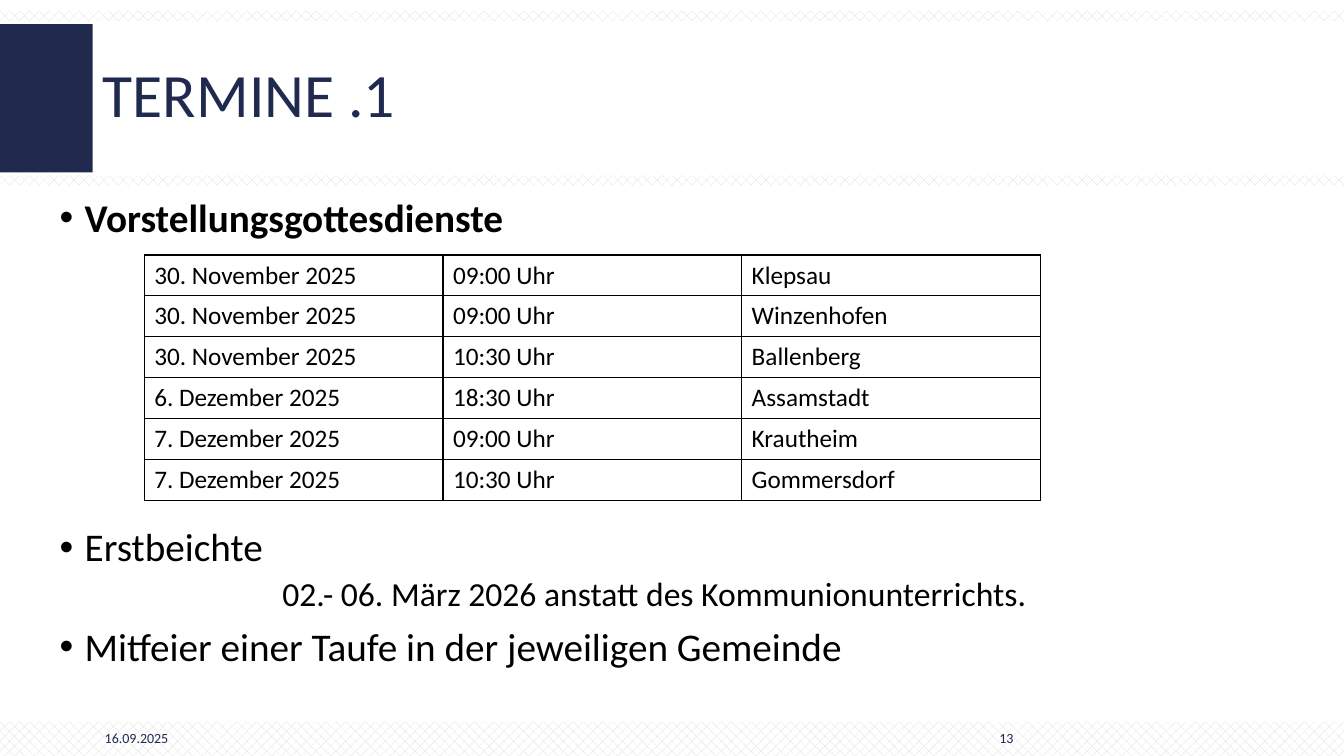
from lxml import etree
from pptx import Presentation
from pptx.dml.color import RGBColor
from pptx.enum.dml import MSO_PATTERN
from pptx.enum.shapes import MSO_SHAPE
from pptx.enum.text import MSO_ANCHOR, MSO_AUTO_SIZE, PP_ALIGN
from pptx.oxml.ns import qn
from pptx.util import Inches, Pt

RECTANGLE = MSO_SHAPE.RECTANGLE
LATTICE = MSO_PATTERN.PERCENT_30
MIDDLE, TOP = MSO_ANCHOR.MIDDLE, MSO_ANCHOR.TOP
LEFT, CENTER, RIGHT = PP_ALIGN.LEFT, PP_ALIGN.CENTER, PP_ALIGN.RIGHT
NO_AUTOFIT = MSO_AUTO_SIZE.NONE
NAVY, BLACK, WHITE, GREY = "202A4F", "000000", "FFFFFF", "D9D9D9"


def rgb(hex_color):
    return RGBColor.from_string(hex_color)


def style(paragraph, size, color, bold=False):
    font = paragraph.font
    font.name, font.size, font.bold = "Calibri", Pt(size), bold
    font.color.rgb = rgb(color)


prs = Presentation()
prs.slide_width, prs.slide_height = Inches(13.33), Inches(7.5)
slide = prs.slides.add_slide(prs.slide_layouts[1])
shapes = slide.shapes

# Decorative bands and title block
for top, height in [(7.16, 0.34), (1.74, 0.1), (0.11, 0.1)]:
    band = shapes.add_shape(RECTANGLE, 0, Inches(top), prs.slide_width, Inches(height))
    band.shadow.inherit = False
    band.line.fill.background()
    band.fill.patterned()
    band.fill.pattern = LATTICE
    band.fill.fore_color.rgb = rgb(GREY)
    band.fill.back_color.rgb = rgb(WHITE)

title_block = shapes.add_shape(RECTANGLE, 0, Inches(0.24), Inches(0.92), Inches(1.47))
title_block.shadow.inherit = False
title_block.fill.solid()
title_block.fill.fore_color.rgb = rgb(NAVY)
title_block.line.fill.background()

# Title
title = shapes.title
title.left, title.top = Inches(0.92), Inches(0.24)
title.width, title.height = Inches(10.39), Inches(1.45)
title.text_frame.text = "TERMINE .1"
title.text_frame.auto_size = NO_AUTOFIT
title.text_frame.vertical_anchor = MIDDLE
heading = title.text_frame.paragraphs[0]
heading.alignment = LEFT
heading.line_spacing = 0.9
style(heading, 44, NAVY)

# Topics: text, level, size, bold, space before (the second leaves room for the table)
topics = [
    ("Vorstellungsgottesdienste", 0, 28, True, 0),
    ("Erstbeichte", 0, 28, False, 205),
    ("02.- 06. März 2026 anstatt des Kommunionunterrichts.", 1, 24, False, 5),
    ("Mitfeier einer Taufe in der jeweiligen Gemeinde", 0, 28, False, 10),
]
body = slide.placeholders[1]
body.left, body.top = Inches(0.49), Inches(1.92)
body.width, body.height = Inches(11.5), Inches(5.03)
body.text_frame.text = "\n".join(topic[0] for topic in topics)
body.text_frame.auto_size = NO_AUTOFIT
body.text_frame.vertical_anchor = TOP
for paragraph, (_, level, size, bold, gap) in zip(body.text_frame.paragraphs, topics):
    paragraph.level = level
    paragraph.alignment = CENTER if level else LEFT
    paragraph.line_spacing = 0.9
    paragraph.space_before = Pt(gap)
    properties = paragraph._p.get_or_add_pPr()
    properties.set("marL", str(Inches(0.5 if level else 0.25)))
    properties.set("indent", str(Inches(0 if level else -0.25)))
    if level:
        etree.SubElement(properties, qn("a:buNone"))
    else:
        etree.SubElement(properties, qn("a:buFont"), typeface="Arial")
        etree.SubElement(properties, qn("a:buChar"), char="•")
    style(paragraph, size, BLACK, bold)

# Table of services
services = [
    ("30. November 2025", "09:00 Uhr", "Klepsau"),
    ("30. November 2025", "09:00 Uhr", "Winzenhofen"),
    ("30. November 2025", "10:30 Uhr", "Ballenberg"),
    ("6. Dezember 2025", "18:30 Uhr", "Assamstadt"),
    ("7. Dezember 2025", "09:00 Uhr", "Krautheim"),
    ("7. Dezember 2025", "10:30 Uhr", "Gommersdorf"),
]
table = shapes.add_table(len(services), 3, Inches(1.43), Inches(2.53),
                         Inches(8.89), Inches(2.43)).table
table.first_row = table.horz_banding = False
for row, service in enumerate(services):
    for column, entry in enumerate(service):
        cell = table.cell(row, column)
        cell.text_frame.text = entry
        style(cell.text_frame.paragraphs[0], 18, BLACK)
        cell.fill.background()
        cell_properties = cell._tc.get_or_add_tcPr()
        for position, side in enumerate(("lnL", "lnR", "lnT", "lnB")):
            border = etree.Element(qn(f"a:{side}"), w=str(Pt(1)))
            fill = etree.SubElement(border, qn("a:solidFill"))
            etree.SubElement(fill, qn("a:srgbClr"), val=BLACK)
            cell_properties.insert(position, border)

# Footer: date and page number
for text, left, width, alignment in [("16.09.2025", 0.94, 0.98, LEFT), ("13", 9.58, 0.57, RIGHT)]:
    footer = shapes.add_textbox(Inches(left), Inches(7.19), Inches(width), Inches(0.31))
    footer.text_frame.word_wrap = True
    footer.text_frame.text = text
    footer.text_frame.paragraphs[0].alignment = alignment
    style(footer.text_frame.paragraphs[0], 10, NAVY)

prs.save("out.pptx")
